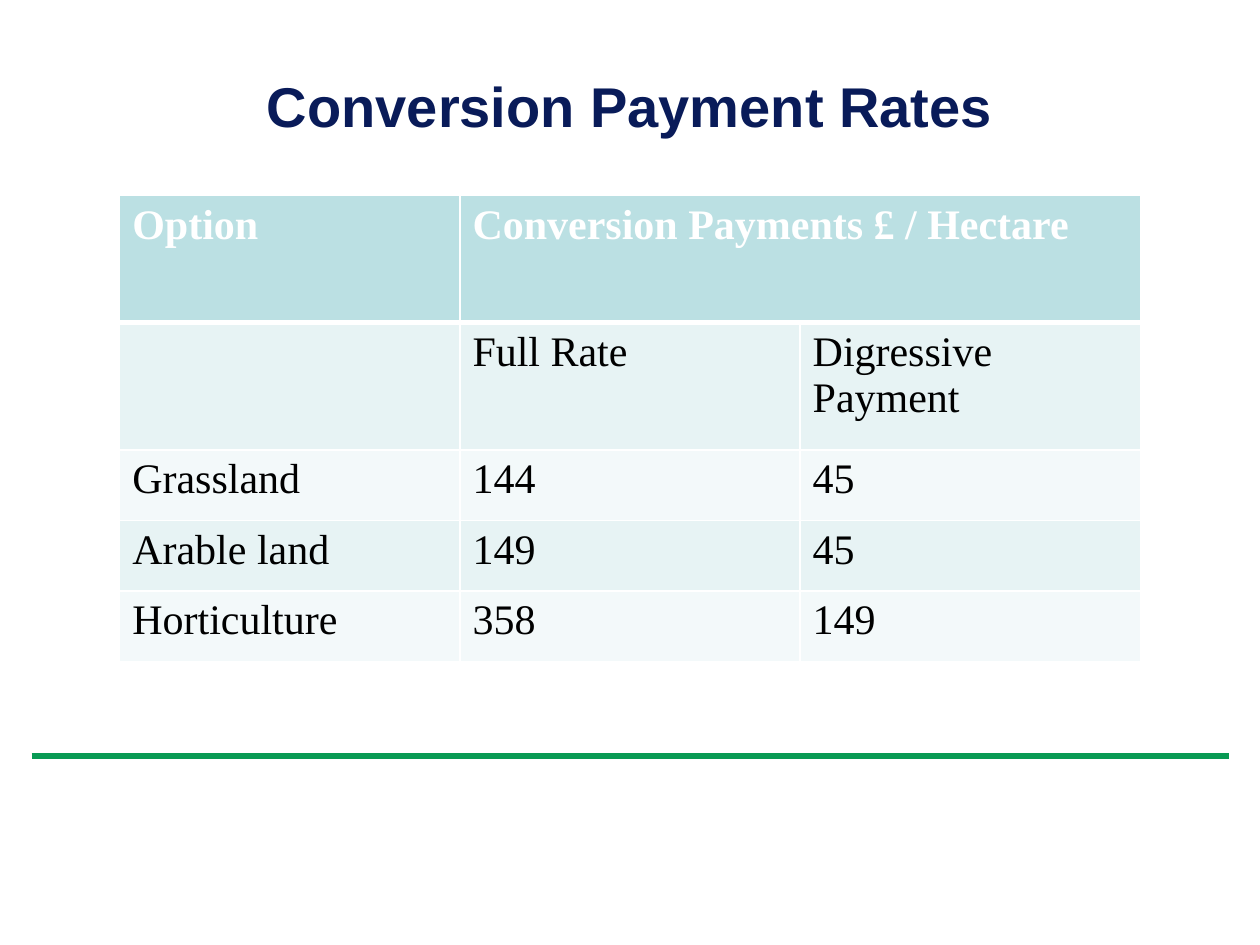
import pptx
import pptx.dml.color
import pptx.enum.shapes
import pptx.enum.text
import pptx.oxml.ns
import pptx.util
from lxml import etree

Inches = pptx.util.Inches
Pt = pptx.util.Pt

COLORS = {
    "title": "091B59",
    "rule": "089A54",
    "header": "BBE0E3",
    "band_dark": "E7F3F4",
    "band_light": "F3F9FA",
    "white": "FFFFFF",
    "black": "000000",
}

ROWS = [
    ["Option", "Conversion Payments £ / Hectare", ""],
    ["", "Full Rate", "Digressive Payment"],
    ["Grassland", "144", "45"],
    ["Arable land", "149", "45"],
    ["Horticulture", "358", "149"],
]
ROW_HEIGHTS = [1.01, 1.01, 0.56, 0.56, 0.56]


def rgb(name):
    return pptx.dml.color.RGBColor.from_string(COLORS[name])


def set_font(paragraph, name, size, color, bold):
    font = paragraph.font
    font.name = name
    font.size = Pt(size)
    font.bold = bold
    font.color.rgb = rgb(color)


def add_rule(page):
    line = page.shapes.add_connector(
        pptx.enum.shapes.MSO_CONNECTOR.STRAIGHT,
        Inches(0.25), Inches(6), Inches(9.75), Inches(6))
    line.line.color.rgb = rgb("rule")
    line.line.width = Pt(3)
    properties = line._element.spPr
    etree.SubElement(properties, pptx.oxml.ns.qn("a:effectLst"))


def add_title(page, text):
    title = page.shapes.title
    title.left, title.top = Inches(0.96), Inches(0.42)
    title.width, title.height = Inches(8.08), Inches(0.83)
    frame = title.text_frame
    frame.text = text
    frame.vertical_anchor = pptx.enum.text.MSO_ANCHOR.MIDDLE
    paragraph = frame.paragraphs[0]
    paragraph.alignment = pptx.enum.text.PP_ALIGN.CENTER
    set_font(paragraph, "Arial", 32, "title", True)


def set_borders(cell, widths):
    """Draw white borders; widths maps the sides L, R, T, B to points."""
    properties = cell._tc.get_or_add_tcPr()
    for side, width in widths.items():
        border = etree.SubElement(
            properties, pptx.oxml.ns.qn(f"a:ln{side}"), w=str(Pt(width)))
        fill = etree.SubElement(border, pptx.oxml.ns.qn("a:solidFill"))
        etree.SubElement(
            fill, pptx.oxml.ns.qn("a:srgbClr"), val=COLORS["white"])


def format_cell(cell, text, row):
    # The header is set off from the body by a thicker line
    set_borders(cell, {"L": 1, "R": 1,
                       "T": 3 if row == 1 else 1,
                       "B": 3 if row == 0 else 1})
    header = row == 0
    band = "band_dark" if row % 2 else "band_light"
    cell.fill.solid()
    cell.fill.fore_color.rgb = rgb("header" if header else band)
    cell.text = text
    set_font(cell.text_frame.paragraphs[0], "Times New Roman", 24,
             "white" if header else "black", header)


def add_rates_table(page):
    table = page.shapes.add_table(
        len(ROWS), len(ROWS[0]), Inches(0.95), Inches(1.55),
        Inches(8.1), Inches(sum(ROW_HEIGHTS))).table
    for column in table.columns:
        column.width = Inches(2.7)
    for row, (height, texts) in enumerate(zip(ROW_HEIGHTS, ROWS)):
        table.rows[row].height = Inches(height)
        for column, text in enumerate(texts):
            format_cell(table.cell(row, column), text, row)
    table.cell(0, 1).merge(table.cell(0, 2))


def main():
    deck = pptx.Presentation()
    deck.slide_width, deck.slide_height = Inches(10), Inches(7.5)
    page = deck.slides.add_slide(deck.slide_layouts[5])
    page.background.fill.solid()
    page.background.fill.fore_color.rgb = rgb("white")

    add_rule(page)
    add_title(page, "Conversion Payment Rates")
    add_rates_table(page)
    deck.save("out.pptx")


if __name__ == "__main__":
    main()
